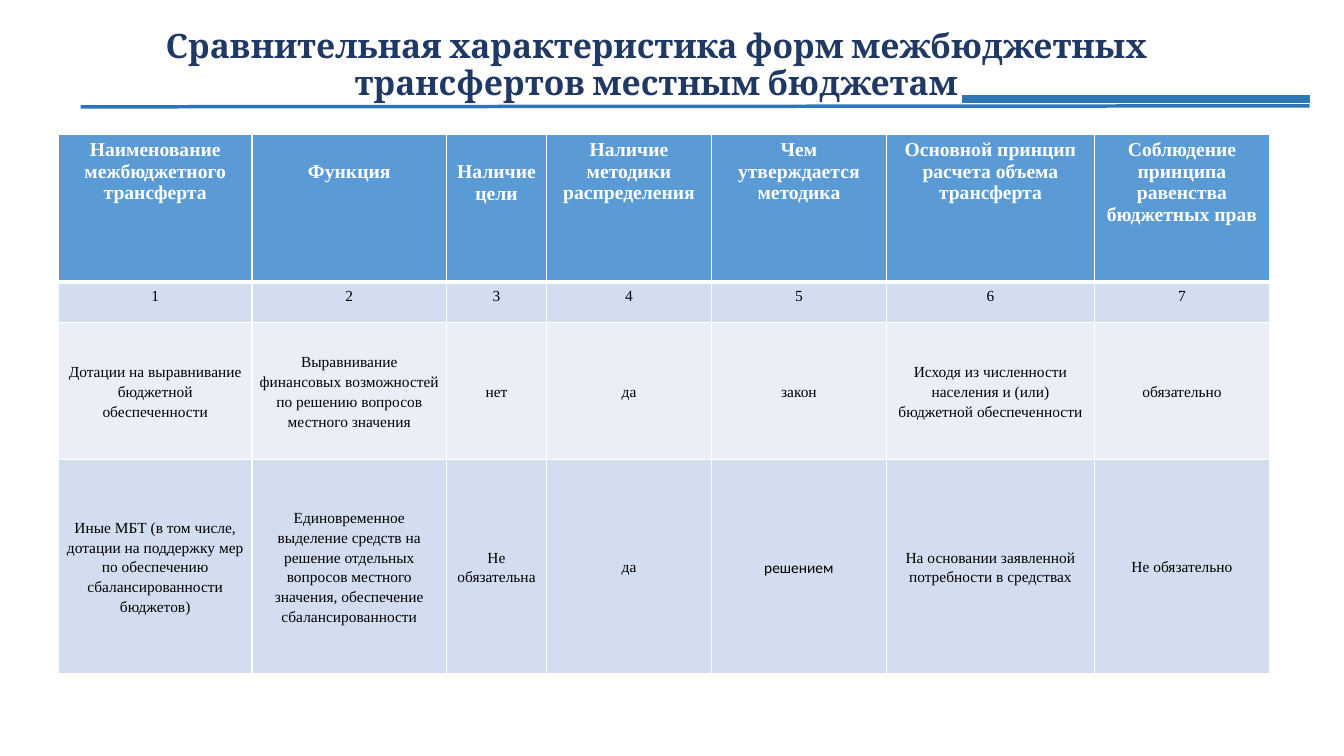
from lxml import etree
from pptx import Presentation
from pptx import util as u
from pptx.dml.color import RGBColor
from pptx.enum import shapes, text
from pptx.oxml import ns

EMU_PER_PX = 9144
NAVY = RGBColor(0x20, 0x38, 0x64)
RULE_BLUE = RGBColor(0x2E, 0x75, 0xB6)
HEADER_BLUE = RGBColor(0x5B, 0x9B, 0xD5)
BAND_DARK = RGBColor(0xD2, 0xDE, 0xEF)
BAND_LIGHT = RGBColor(0xEA, 0xEF, 0xF7)
WHITE = RGBColor(0xFF, 0xFF, 0xFF)
BLACK = RGBColor(0, 0, 0)
SERIF = "Times New Roman"

TITLE = "Сравнительная характеристика форм межбюджетных трансфертов местным бюджетам"
COLUMN_WIDTHS = [192, 193, 99, 164, 173, 207, 173]
ROW_HEIGHTS = [147, 40, 136, 212]
HEADERS = [
    "Наименование межбюджетного трансферта",
    "Функция",
    "Наличие цели",
    "Наличие методики распределения",
    "Чем утверждается методика",
    "Основной принцип расчета объема трансферта",
    "Соблюдение принципа равенства бюджетных прав",
]
LOWERED_HEADERS = {"Функция", "Наличие цели"}
GRANTS = [
    "Дотации на выравнивание бюджетной обеспеченности",
    "Выравнивание финансовых возможностей по решению вопросов местного значения",
    "нет",
    "да",
    "закон",
    "Исходя из численности населения и (или) бюджетной обеспеченности",
    "обязательно",
]
OTHER_TRANSFERS = [
    "Иные МБТ (в том числе, дотации на поддержку мер по обеспечению сбалансированности бюджетов)",
    "Единовременное выделение средств на решение отдельных вопросов местного значения, "
    "обеспечение сбалансированности",
    "Не обязательна",
    "да",
    "решением",
    "На основании заявленной потребности в средствах",
    "Не обязательно",
]


def px(value):
    return u.Emu(value * EMU_PER_PX)


def write(frame, words, size, color, font=SERIF, bold=False):
    paragraph = frame.paragraphs[0]
    paragraph.alignment = text.PP_ALIGN.CENTER
    run = paragraph.add_run()
    run.text = words
    run.font.name = font
    run.font.size = u.Pt(size)
    run.font.bold = bold
    run.font.color.rgb = color
    return paragraph


def set_margins(target, left, top, right, bottom):
    target.margin_left, target.margin_top = px(left), px(top)
    target.margin_right, target.margin_bottom = px(right), px(bottom)


def add_title(slide):
    frame = slide.shapes.add_textbox(px(51), px(26), px(1200), px(79)).text_frame
    frame.word_wrap = True
    frame.vertical_anchor = text.MSO_ANCHOR.MIDDLE
    write(frame, TITLE, 24, NAVY, "Cambria", True).line_spacing = 0.9


def add_rule(slide, start, end, width):
    line = slide.shapes.add_connector(
        shapes.MSO_CONNECTOR.STRAIGHT, *map(px, start + end))
    line.line.color.rgb = RULE_BLUE
    line.line.width = u.Pt(width)
    etree.SubElement(line._element.spPr, ns.qn("a:effectLst"))


def set_borders(cell, top, bottom):
    properties = cell._tc.get_or_add_tcPr()
    for side, width in (("L", 1), ("R", 1), ("T", top), ("B", bottom)):
        border = etree.SubElement(
            properties, ns.qn("a:ln" + side), w=str(u.Pt(width)))
        fill = etree.SubElement(border, ns.qn("a:solidFill"))
        etree.SubElement(fill, ns.qn("a:srgbClr"), val=str(WHITE))


def fill_cell(cell, color, top=1, bottom=1):
    set_borders(cell, top, bottom)
    cell.fill.solid()
    cell.fill.fore_color.rgb = color


def fill_header(cell, words):
    fill_cell(cell, HEADER_BLUE, bottom=3)
    set_margins(cell, 10, 27 if words in LOWERED_HEADERS else 5, 10, 5)
    write(cell.text_frame, words, 14, WHITE, bold=True)


def fill_number(cell, words):
    fill_cell(cell, BAND_DARK, top=3)
    write(cell.text_frame, words, 11, BLACK)


def fill_body(cell, words, color):
    fill_cell(cell, color)
    set_margins(cell, 7, 0, 7, 0)
    cell.vertical_anchor = text.MSO_ANCHOR.MIDDLE
    font = "Calibri" if words == "решением" else SERIF
    paragraph = write(cell.text_frame, words, 11, BLACK, font)
    paragraph.line_spacing = 1.15
    paragraph.space_after = u.Pt(10)


def add_transfer_table(slide):
    table = slide.shapes.add_table(
        len(ROW_HEIGHTS), len(COLUMN_WIDTHS), px(58), px(133),
        px(sum(COLUMN_WIDTHS)), px(sum(ROW_HEIGHTS))).table
    for column, width in zip(table.columns, COLUMN_WIDTHS):
        column.width = px(width)
    for row, height in zip(table.rows, ROW_HEIGHTS):
        row.height = px(height)
    for index, header in enumerate(HEADERS):
        fill_header(table.cell(0, index), header)
        fill_number(table.cell(1, index), str(index + 1))
        fill_body(table.cell(2, index), GRANTS[index], BAND_LIGHT)
        fill_body(table.cell(3, index), OTHER_TRANSFERS[index], BAND_DARK)


def main():
    presentation = Presentation()
    presentation.slide_width, presentation.slide_height = px(1333), px(750)
    slide = presentation.slides.add_slide(presentation.slide_layouts[6])
    add_title(slide)
    add_rule(slide, (80, 106), (1299, 105), 2.5)
    add_rule(slide, (954, 98), (1299, 98), 6)
    add_transfer_table(slide)
    presentation.save("out.pptx")


if __name__ == "__main__":
    main()
